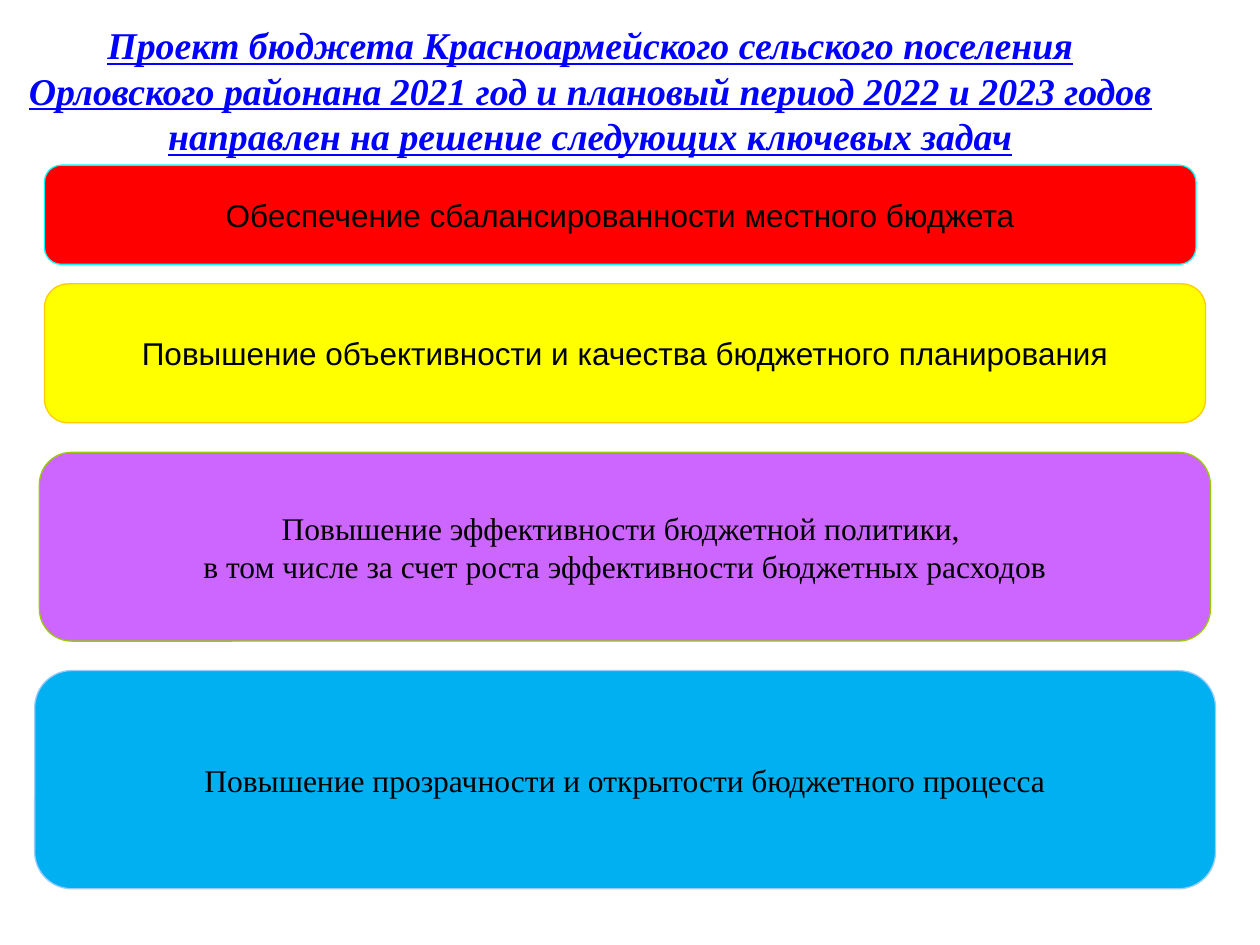
from pptx import Presentation
from pptx.dml.color import RGBColor
from pptx.enum.shapes import MSO_SHAPE
from pptx.enum.text import MSO_ANCHOR, PP_ALIGN
from pptx.util import Pt

ROUNDED = MSO_SHAPE.ROUNDED_RECTANGLE
MIDDLE = MSO_ANCHOR.MIDDLE
CENTER = PP_ALIGN.CENTER

BLACK = RGBColor(0x00, 0x00, 0x00)
BLUE = RGBColor(0x00, 0x00, 0xFF)
RED = RGBColor(0xFF, 0x00, 0x00)
CYAN = RGBColor(0x00, 0xFF, 0xFF)
YELLOW = RGBColor(0xFF, 0xFF, 0x00)
AMBER = RGBColor(0xFF, 0xCC, 0x00)
VIOLET = RGBColor(0xCC, 0x66, 0xFF)
GREEN = RGBColor(0x99, 0xCC, 0x00)
SKY = RGBColor(0x00, 0xB0, 0xF0)
PALE_BLUE = RGBColor(0x99, 0xCC, 0xFF)

SANS = "Arial"
SERIF = "Times New Roman"


def write_centered(frame, text, font_name, size, color):
    frame.text = text
    frame.vertical_anchor = MIDDLE
    for paragraph in frame.paragraphs:
        paragraph.alignment = CENTER
        for run in paragraph.runs:
            run.font.name = font_name
            run.font.size = Pt(size)
            run.font.color.rgb = color


prs = Presentation()
prs.slide_width, prs.slide_height = Pt(720), Pt(540)
slide = prs.slides.add_slide(prs.slide_layouts[6])

heading = slide.shapes.add_textbox(Pt(0), Pt(20.16), Pt(674.64), Pt(62.64)).text_frame
heading.word_wrap = True
write_centered(
    heading,
    "Проект бюджета Красноармейского сельского поселения Орловского районана "
    "2021 год и плановый период 2022 и 2023 годов направлен на решение "
    "следующих ключевых задач",
    SERIF, 21.6, BLUE,
)
heading_font = heading.paragraphs[0].runs[0].font
heading_font.bold = heading_font.italic = heading_font.underline = True

# left, top, width, height, fill, outline, font, wording
tasks = [
    (25.4, 94.4, 658, 56.7, RED, CYAN, SANS,
     "Обеспечение сбалансированности местного бюджета"),
    (25.4, 162.2, 663.5, 79.4, YELLOW, AMBER, SANS,
     "Повышение объективности и качества бюджетного планирования"),
    (22.5, 258.5, 669.2, 107.9, VIOLET, GREEN, SERIF,
     "Повышение эффективности бюджетной политики, \n"
     "в том числе за счет роста эффективности бюджетных расходов"),
    (19.8, 383.2, 674.8, 124.7, SKY, PALE_BLUE, SERIF,
     "Повышение прозрачности и открытости бюджетного процесса"),
]

for left, top, width, height, fill, outline, font_name, wording in tasks:
    task = slide.shapes.add_shape(ROUNDED, Pt(left), Pt(top), Pt(width), Pt(height))
    task.adjustments[0] = 0.17
    task.shadow.inherit = False
    task.fill.solid()
    task.fill.fore_color.rgb = fill
    task.line.color.rgb = outline
    task.line.width = Pt(0.75)
    task.text_frame.word_wrap = False
    write_centered(task.text_frame, wording, font_name, 18, BLACK)

prs.save("out.pptx")
